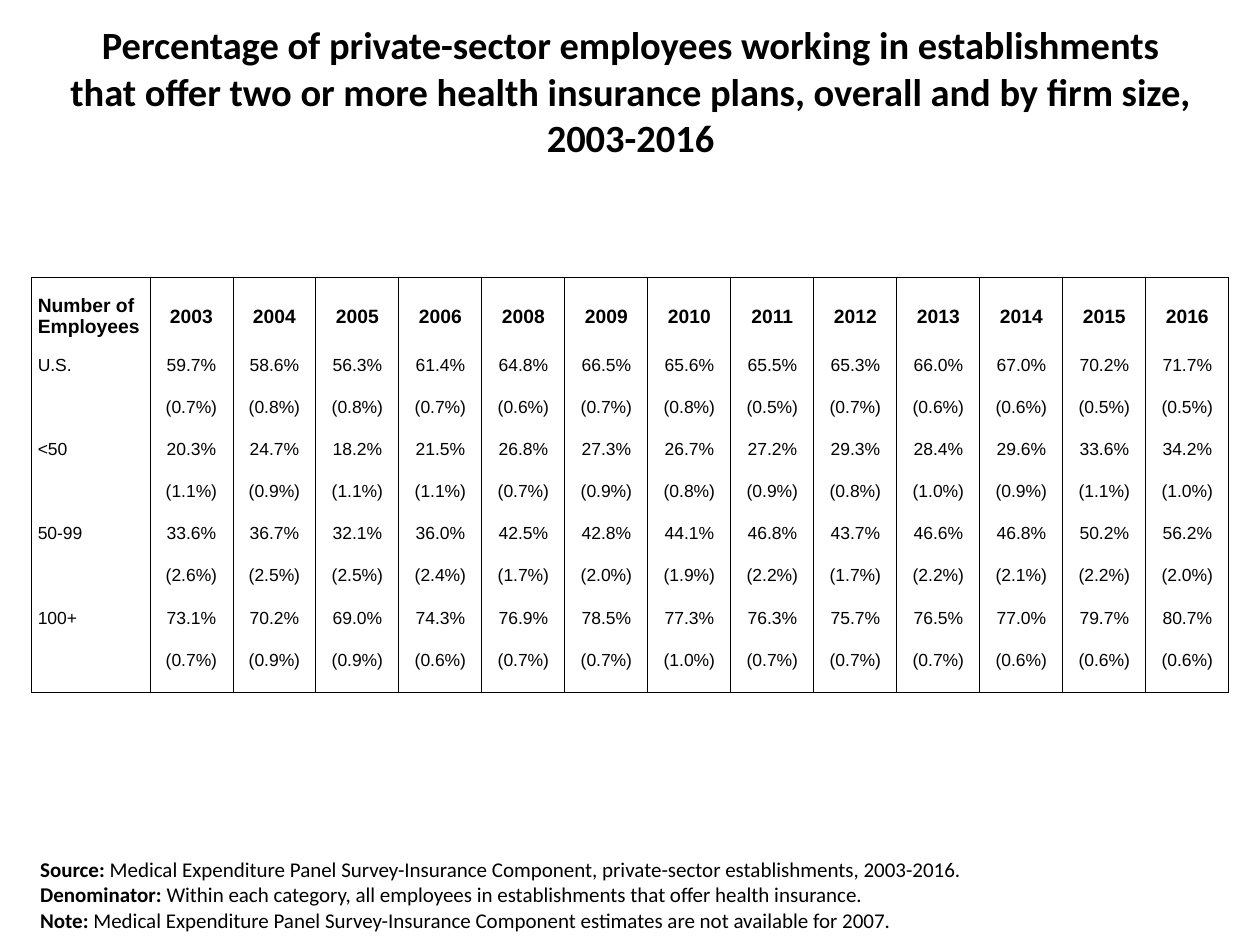
from lxml.etree import SubElement
from pptx import Presentation
from pptx.dml.color import RGBColor
from pptx.enum.text import MSO_ANCHOR as Anchor, PP_ALIGN as Align
from pptx.oxml.ns import qn
from pptx.util import Inches, Pt

WIDTH, HEIGHT = Inches(10), Inches(7.5)
COLORS = {"ink": "000000", "paper": "FFFFFF"}
LABEL_COLUMN, YEAR_COLUMN = 0.094, 0.0659
HEADER_ROW, DATA_ROW = 0.083, 0.0446

TITLE = ("Percentage of private-sector employees working in establishments that offer "
         "two or more health insurance plans, overall and by firm size, 2003-2016")
YEARS = [2003, 2004, 2005, 2006, 2008, 2009, 2010, 2011, 2012, 2013, 2014, 2015, 2016]
ESTIMATES = {
    "U.S.": (
        [59.7, 58.6, 56.3, 61.4, 64.8, 66.5, 65.6, 65.5, 65.3, 66.0, 67.0, 70.2, 71.7],
        [0.7, 0.8, 0.8, 0.7, 0.6, 0.7, 0.8, 0.5, 0.7, 0.6, 0.6, 0.5, 0.5]),
    "<50": (
        [20.3, 24.7, 18.2, 21.5, 26.8, 27.3, 26.7, 27.2, 29.3, 28.4, 29.6, 33.6, 34.2],
        [1.1, 0.9, 1.1, 1.1, 0.7, 0.9, 0.8, 0.9, 0.8, 1.0, 0.9, 1.1, 1.0]),
    "50-99": (
        [33.6, 36.7, 32.1, 36.0, 42.5, 42.8, 44.1, 46.8, 43.7, 46.6, 46.8, 50.2, 56.2],
        [2.6, 2.5, 2.5, 2.4, 1.7, 2.0, 1.9, 2.2, 1.7, 2.2, 2.1, 2.2, 2.0]),
    "100+": (
        [73.1, 70.2, 69.0, 74.3, 76.9, 78.5, 77.3, 76.3, 75.7, 76.5, 77.0, 79.7, 80.7],
        [0.7, 0.9, 0.9, 0.6, 0.7, 0.7, 1.0, 0.7, 0.7, 0.7, 0.6, 0.6, 0.6]),
}
NOTES = [
    ("Source: ", "Medical Expenditure Panel Survey-Insurance Component, "
                 "private-sector establishments, 2003-2016."),
    ("Denominator: ", "Within each category, all employees in establishments "
                      "that offer health insurance."),
    ("Note: ", "Medical Expenditure Panel Survey-Insurance Component estimates "
               "are not available for 2007."),
]


def style_font(font, name, size, bold):
    """Apply a typeface, size and weight in the ink colour."""
    font.name, font.size, font.bold = name, Pt(size), bold
    font.color.rgb = RGBColor.from_string(COLORS["ink"])


def add_text(page, left, top, width, height):
    """Add a wrapping text box placed by shares of the slide's size."""
    box = page.shapes.add_textbox(int(left * WIDTH), int(top * HEIGHT),
                                  int(width * WIDTH), int(height * HEIGHT))
    box.text_frame.word_wrap = True
    return box.text_frame


def add_title(page):
    """Add the centred slide title."""
    frame = add_text(page, 0.042, 0.001, 0.917, 0.19)
    frame.vertical_anchor = Anchor.MIDDLE
    frame.text = TITLE
    para = frame.paragraphs[0]
    para.alignment = Align.CENTER
    style_font(para.runs[0].font, "Calibri", 22, True)


def add_notes(page):
    """Add the notes, each led by a bold label."""
    frame = add_text(page, 0.022, 0.9, 0.758, 0.1)
    for index, note in enumerate(NOTES):
        para = frame.add_paragraph() if index else frame.paragraphs[0]
        for text, bold in zip(note, (True, False)):
            span = para.add_run()
            span.text = text
            style_font(span.font, "Calibri", 12, bold)


def set_borders(cell, sides):
    """Draw thin lines on the given sides and clear the others."""
    properties = cell._tc.get_or_add_tcPr()
    for side in "LRTB":
        line = SubElement(properties, qn(f"a:ln{side}"), w=str(Pt(0.5)))
        if side in sides:
            fill = SubElement(line, qn("a:solidFill"))
            SubElement(fill, qn("a:srgbClr"), val=COLORS["ink"])
        else:
            SubElement(line, qn("a:noFill"))


def fill_cell(cell, text, is_label, is_header):
    """Write and format one table cell."""
    cell.margin_left = cell.margin_right = cell.margin_top = cell.margin_bottom = 0
    cell.vertical_anchor = Anchor.MIDDLE if is_header else Anchor.TOP
    cell.fill.solid()
    cell.fill.fore_color.rgb = RGBColor.from_string(COLORS["paper"])
    cell.text_frame.text = text
    para = cell.text_frame.paragraphs[0]
    if is_label:
        para._p.get_or_add_pPr().set("marL", str(Inches(0.05)))
    else:
        para.alignment = Align.CENTER
    for font in [para.font] + [span.font for span in para.runs]:
        style_font(font, "Arial", 11 if is_header else 10, is_header)


def table_rows():
    """Return the header, then a row of estimates and one of errors per firm size."""
    rows = [["Number of Employees"] + [str(year) for year in YEARS]]
    for label, (shares, errors) in ESTIMATES.items():
        rows.append([label] + [f"{share:.1f}%" for share in shares])
        rows.append([""] + [f"({error:.1f}%)" for error in errors])
    return rows


def add_estimates(page):
    """Add the table of estimates by firm size and year."""
    rows = table_rows()
    widths = [LABEL_COLUMN] + [YEAR_COLUMN] * len(YEARS)
    heights = [HEADER_ROW] + [DATA_ROW] * (len(rows) - 1)
    table = page.shapes.add_table(
        len(rows), len(widths), int(0.025 * WIDTH), int(0.2933 * HEIGHT),
        int(sum(widths) * WIDTH), int(sum(heights) * HEIGHT)).table
    table.first_row = table.horz_banding = False
    for column, share in zip(table.columns, widths):
        column.width = int(share * WIDTH)
    for row, share in zip(table.rows, heights):
        row.height = int(share * HEIGHT)
    outer_sides = {0: "LRT", len(rows) - 1: "LRB"}
    for r, texts in enumerate(rows):
        for c, text in enumerate(texts):
            cell = table.cell(r, c)
            set_borders(cell, outer_sides.get(r, "LR"))
            fill_cell(cell, text, c == 0, r == 0)


def main():
    """Build and save the slide."""
    deck = Presentation()
    deck.slide_width, deck.slide_height = WIDTH, HEIGHT
    page = deck.slides.add_slide(deck.slide_layouts[6])
    add_title(page)
    add_estimates(page)
    add_notes(page)
    deck.save("out.pptx")


if __name__ == "__main__":
    main()
